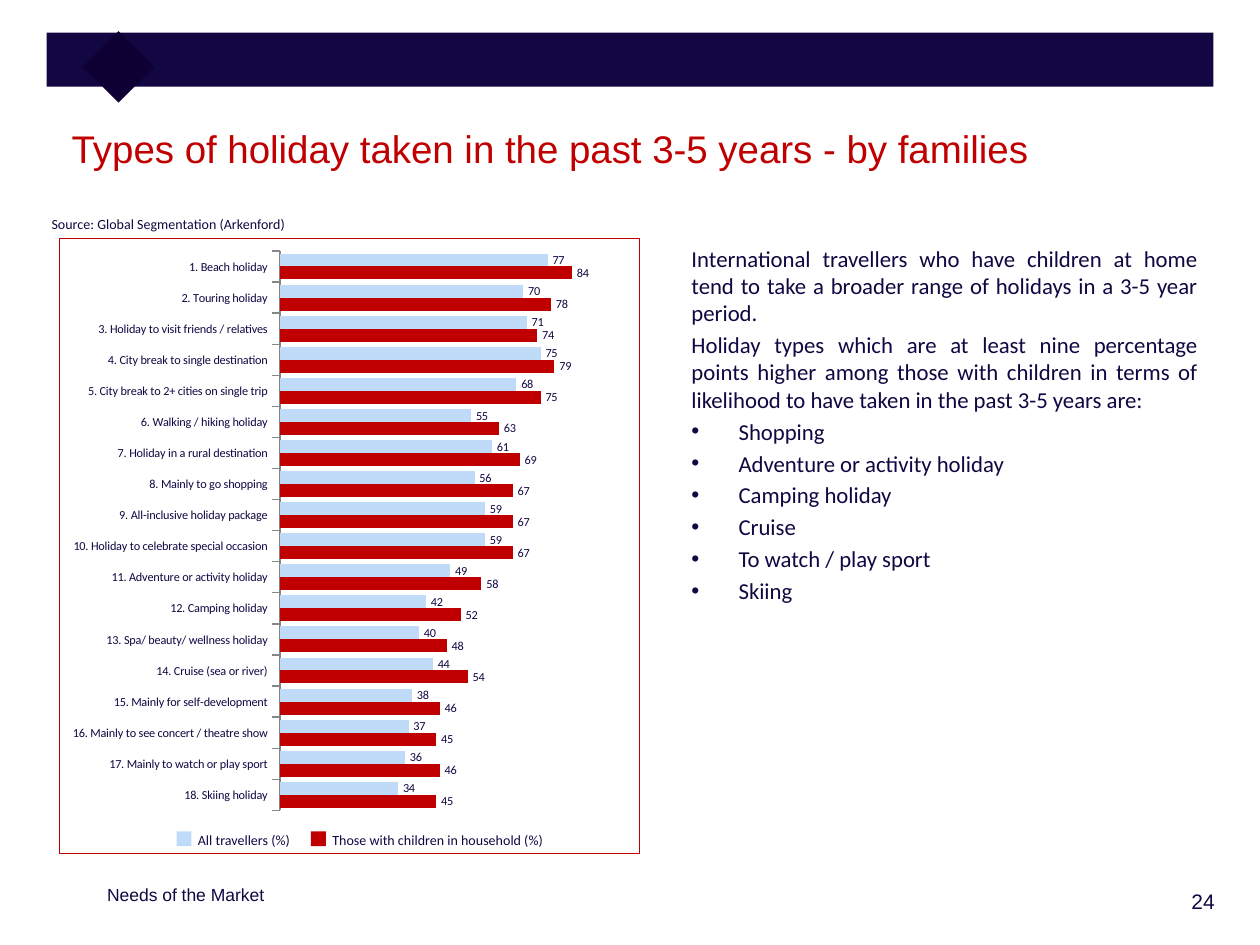
from dataclasses import dataclass

from lxml.etree import SubElement
from pptx import Presentation
from pptx.chart.data import CategoryChartData
from pptx.dml.color import RGBColor
from pptx.enum.chart import XL_CHART_TYPE, XL_LABEL_POSITION, XL_TICK_MARK
from pptx.enum.shapes import MSO_SHAPE
from pptx.enum.text import MSO_ANCHOR, MSO_AUTO_SIZE, PP_ALIGN
from pptx.oxml import parse_xml
from pptx.oxml.ns import nsdecls, qn
from pptx.util import Cm, Pt


@dataclass(frozen=True)
class Theme:
    """Colours, fonts and type sizes of the slide."""
    navy: RGBColor = RGBColor.from_string("120742")
    dark: RGBColor = RGBColor.from_string("0E0033")
    red: RGBColor = RGBColor.from_string("C00000")
    blue: RGBColor = RGBColor.from_string("BFDBF7")
    axis: RGBColor = RGBColor.from_string("868686")
    head: str = "Arial"
    body: str = "Calibri"
    title_size: int = 22
    text_size: int = 13
    number_size: int = 12
    footer_size: int = 10
    note_size: int = 8
    chart_size: int = 7


T = Theme()

HOLIDAYS = [
    ("Beach holiday", 77, 84),
    ("Touring holiday", 70, 78),
    ("Holiday to visit friends / relatives", 71, 74),
    ("City break to single destination", 75, 79),
    ("City break to 2+ cities on single trip", 68, 75),
    ("Walking / hiking holiday", 55, 63),
    ("Holiday in a rural destination", 61, 69),
    ("Mainly to go shopping", 56, 67),
    ("All-inclusive holiday package", 59, 67),
    ("Holiday to celebrate special occasion", 59, 67),
    ("Adventure or activity holiday", 49, 58),
    ("Camping holiday", 42, 52),
    ("Spa/ beauty/ wellness holiday", 40, 48),
    ("Cruise (sea or river)", 44, 54),
    ("Mainly for self-development", 38, 46),
    ("Mainly to see concert / theatre show", 37, 45),
    ("Mainly to watch or play sport", 36, 46),
    ("Skiing holiday", 34, 45),
]
SERIES = [
    ("All travellers (%)", T.blue, 3.56, 2.39),
    ("Those with children in household (%)", T.red, 6.27, 4.8),
]
FINDINGS = [
    "International travellers who have children at home tend to take a broader "
    "range of holidays in a 3-5 year period.",
    "Holiday types which are at least nine percentage points higher among those "
    "with children in terms of likelihood to have taken in the past 3-5 years are:",
]
BULLETS = ["Shopping", "Adventure or activity holiday", "Camping holiday",
           "Cruise", "To watch / play sport", "Skiing"]


def style_font(font, size, name=T.body, color=T.navy):
    """Set size, typeface and colour of a font."""
    font.size, font.name = Pt(size), name
    font.color.rgb = color


def add_run(p, text, size, name=T.body, color=T.navy):
    """Append a formatted run to a paragraph."""
    r = p.add_run()
    r.text = text
    style_font(r.font, size, name, color)


def add_text(s, box, text, size, name=T.body, align=PP_ALIGN.LEFT, wrap=True):
    """Add a one-paragraph text box."""
    tf = s.shapes.add_textbox(*map(Cm, box)).text_frame
    tf.word_wrap = wrap
    p = tf.paragraphs[0]
    p.alignment = align
    add_run(p, text, size, name)


def add_block(s, box, color, rotation=0):
    """Add a plain filled rectangle."""
    sp = s.shapes.add_shape(MSO_SHAPE.RECTANGLE, *map(Cm, box))
    sp.shadow.inherit = False
    sp.fill.solid()
    sp.fill.fore_color.rgb = color
    sp.line.fill.background()
    sp.rotation = rotation


def set_title(s, text):
    """Place and format the title placeholder."""
    sp = s.shapes.title
    sp.left, sp.top, sp.width, sp.height = map(Cm, (1.19, 2.41, 23.27, 2.26))
    tf = sp.text_frame
    tf.auto_size = MSO_AUTO_SIZE.NONE
    tf.vertical_anchor = MSO_ANCHOR.TOP
    p = tf.paragraphs[0]
    p.alignment = PP_ALIGN.LEFT
    p.line_spacing = Pt(26)
    add_run(p, text, T.title_size, T.head, T.red)


def add_findings(s, box):
    """Add the commentary with its bulleted holiday types."""
    tf = s.shapes.add_textbox(*map(Cm, box)).text_frame
    tf.word_wrap = True
    for i, text in enumerate(FINDINGS + BULLETS):
        p = tf.add_paragraph() if i else tf.paragraphs[0]
        p.alignment = PP_ALIGN.JUSTIFY
        if i:
            p.space_before = Pt(2.6)
        if text in BULLETS:
            pPr = p._p.get_or_add_pPr()
            pPr.set("marL", str(Cm(0.95)))
            pPr.set("indent", str(-Cm(0.95)))
            SubElement(pPr, qn("a:buFont"), typeface="Arial")
            SubElement(pPr, qn("a:buChar"), char="•")
        add_run(p, text, T.text_size)


def frame_chart(chart, x, y, w, h):
    """Fix the inner plot area and draw the border of a chart."""
    plot_area = chart.element.chart.plotArea
    for old in plot_area.findall(qn("c:layout")):
        plot_area.remove(old)
    plot_area.insert(0, parse_xml(
        f'<c:layout {nsdecls("c")}><c:manualLayout><c:layoutTarget val="inner"/>'
        f'<c:xMode val="edge"/><c:yMode val="edge"/><c:x val="{x}"/><c:y val="{y}"/>'
        f'<c:w val="{w}"/><c:h val="{h}"/></c:manualLayout></c:layout>'))
    chart.element.chart.addnext(parse_xml(
        f'<c:spPr {nsdecls("c", "a")}><a:noFill/><a:ln w="{Pt(0.75)}"><a:solidFill>'
        f'<a:srgbClr val="{T.red}"/></a:solidFill></a:ln></c:spPr>'))


def add_holiday_chart(s, box):
    """Add the clustered bars for all travellers and families."""
    names, *columns = zip(*HOLIDAYS)
    data = CategoryChartData(number_format="#,##0")
    data.categories = [f"{i}. {name}" for i, name in enumerate(names, 1)]
    for (name, *_), values in zip(SERIES, columns):
        data.add_series(name, values)
    chart = s.shapes.add_chart(XL_CHART_TYPE.BAR_CLUSTERED, *map(Cm, box), data).chart
    chart.has_legend = chart.has_title = False
    style_font(chart.font, T.chart_size)
    frame_chart(chart, 0.38, 0.02, 0.6, 0.91)
    cat, val = chart.category_axis, chart.value_axis
    cat.reverse_order = True
    cat.major_tick_mark = XL_TICK_MARK.OUTSIDE
    cat.format.line.color.rgb = T.axis
    style_font(cat.tick_labels.font, T.chart_size)
    val.minimum_scale, val.maximum_scale = 0, 100
    val.has_major_gridlines = val.visible = False
    plot = chart.plots[0]
    plot.gap_width, plot.overlap, plot.vary_by_categories = 40, 0, False
    for series, (_, color, *_) in zip(plot.series, SERIES):
        series.format.fill.solid()
        series.format.fill.fore_color.rgb = color
        labels = series.data_labels
        labels.show_value = True
        labels.number_format, labels.number_format_is_linked = "#,##0", False
        labels.position = XL_LABEL_POSITION.OUTSIDE_END
        style_font(labels.font, T.chart_size)


def main():
    """Build the slide and save it."""
    prs = Presentation()
    prs.slide_width, prs.slide_height = Cm(25.4), Cm(19.05)
    s = prs.slides.add_slide(prs.slide_layouts[5])
    add_block(s, (0.94, 0.66, 23.52, 1.09), T.navy)
    add_block(s, (1.88, 0.84, 1.02, 1.02), T.dark, 45)
    set_title(s, "Types of holiday taken in the past 3-5 years - by families")
    add_holiday_chart(s, (1.19, 4.8, 11.71, 12.42))
    for name, color, x, width in SERIES:
        add_block(s, (x, 16.76, 0.3, 0.3), color)
        add_text(s, (x + 0.18, 16.64, width, 0.61), name, T.note_size, wrap=False)
    add_findings(s, (13.69, 4.8, 10.69, 12.9))
    add_text(s, (0.79, 4.22, 5.36, 0.61), "Source: Global Segmentation (Arkenford)",
             T.note_size, wrap=False)
    add_text(s, (1.91, 17.7, 5.51, 0.81), "Needs of the Market", T.footer_size, T.head)
    add_text(s, (21.67, 17.78, 3.07, 0.91), "24", T.number_size, T.head, PP_ALIGN.RIGHT)
    prs.save("out.pptx")


if __name__ == "__main__":
    main()
